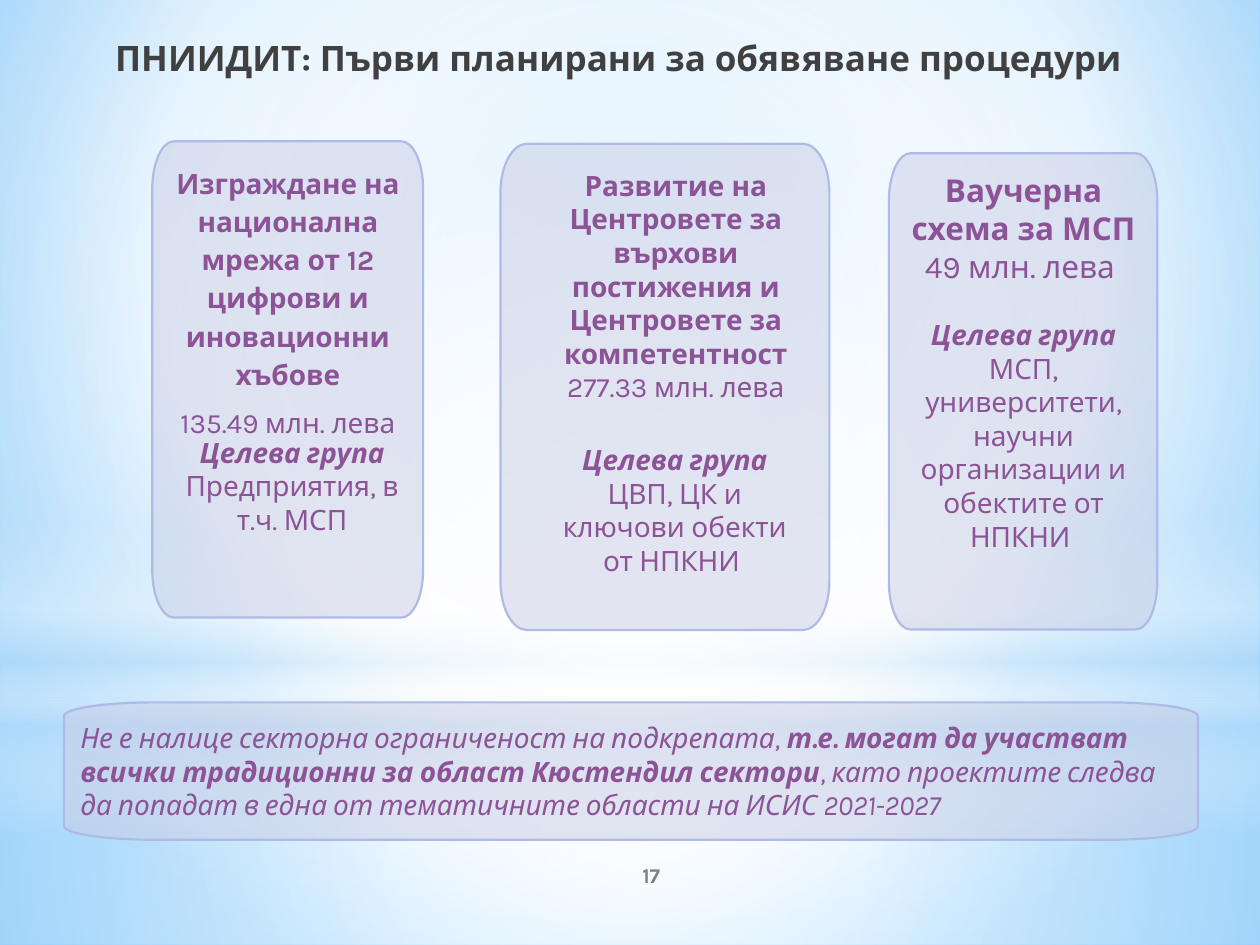
from lxml.etree import SubElement
from pptx import Presentation
from pptx.dml.color import RGBColor
from pptx.enum.shapes import MSO_SHAPE as Preset
from pptx.enum.text import MSO_ANCHOR as Anchor, MSO_AUTO_SIZE as AutoSize, PP_ALIGN as Align
from pptx.oxml import parse_xml
from pptx.oxml.ns import nsdecls, qn
from pptx.util import Cm, Pt

FONT = "Karla"
COLORS = {
    "title": "404040", "text": "8D5397", "number": "808080",
    "panel": "C8CDE5", "edge": "AFBBE6",
    "white": "FFFFFF", "mist": "B4DCFA", "sky": "9ED5FF", "deep": "5BB9FF",
}
CENTER = (50, 50, 50, 50)
ARC = 0.55
BACKDROP = [
    (Preset.RECTANGLE, (0, 14.17, 25.4, 4.88), CENTER,
     [(0, "white", 91), (37, "white", 76), (100, "mist", 79)]),
    (Preset.RECTANGLE, (0, 0, 25.4, 14.17), CENTER,
     [(0, "white", 89), (48, "white", 62), (100, "mist", 79)]),
    (Preset.RECTANGLE, (0, 10.47, 25.4, 6.35), None,
     [(0, "white", 0), (29, "white", 30), (45, "mist", 40),
      (55, "white", 26), (65, "mist", 60), (100, "white", 0)]),
    (Preset.OVAL, (0, 4.44, 25.4, 14.17), CENTER,
     [(0, "white", 100), (56, "white", 0)]),
]
CARDS = [
    {"panel": (3.07, 2.85, 5.46, 9.6), "size": 16, "line": 1.14, "after": 5.6,
     "head_box": (2.78, 3.13, 6.05, 5.18),
     "head": "Изграждане на национална мрежа от 12 цифрови и иновационни хъбове",
     "budget": "135.49 млн. лева",
     "target_box": (3.25, 8.65, 5.28, 2.31), "target": "Предприятия, в т.ч. МСП"},
    {"panel": (10.09, 2.9, 6.63, 9.8), "size": 16, "line": 1, "after": 0,
     "head_box": (10.87, 3.27, 5.51, 5.05),
     "head": "Развитие на Центровете за върхови постижения и Центровете за компетентност",
     "budget": "277.33 млн. лева",
     "target_box": (10.85, 8.8, 5.51, 3), "target": "ЦВП, ЦК и ключови обекти от НПКНИ "},
    {"panel": (17.92, 3.09, 5.41, 9.6), "size": 18, "line": 1, "after": 0,
     "head_box": (17.93, 3.33, 5.41, 2.57),
     "head": "Ваучерна схема за МСП", "budget": "49 млн. лева ",
     "target_box": (17.93, 6.28, 5.41, 5.05),
     "target": "МСП, университети, научни организации и обектите от НПКНИ "},
]


def rgb(name):
    return RGBColor.from_string(COLORS[name])


def lengths(values):
    return [Cm(value) for value in values]


def set_gradient(fill, holder, stops, focus):
    fill.background()
    stop_xml = "".join(
        f'<a:gs pos="{pos * 1000}"><a:srgbClr val="{COLORS[color]}">'
        f'<a:alpha val="{alpha * 1000}"/></a:srgbClr></a:gs>'
        for pos, color, alpha in stops)
    if focus:
        sides = " ".join(f'{side}="{value * 1000}"' for side, value in zip("ltrb", focus))
        direction = f'<a:path path="circle"><a:fillToRect {sides}/></a:path>'
    else:
        direction = '<a:lin ang="5400000" scaled="0"/>'
    gradient = parse_xml(f'<a:gradFill {nsdecls("a")} rotWithShape="1">'
                         f'<a:gsLst>{stop_xml}</a:gsLst>{direction}</a:gradFill>')
    holder.replace(holder.find(qn("a:noFill")), gradient)


def add_backdrop(page):
    fill = page.background.fill
    fill.background()
    set_gradient(fill, page._element.find(".//" + qn("p:bgPr")),
                 [(0, "sky", 100), (60, "white", 100), (100, "deep", 100)], (20, 10, 20, 60))
    for preset, box, focus, stops in BACKDROP:
        shape = page.shapes.add_shape(preset, *lengths(box))
        shape.shadow.inherit = False
        shape.line.fill.background()
        set_gradient(shape.fill, shape._element.spPr, stops, focus)


def round_corners(panel, points, corners):
    segments = panel._element.findall(".//" + qn("a:lnTo"))[::2]
    for segment, start, end, corner in zip(segments, points[::2], points[1::2], corners):
        curve = parse_xml(f'<a:cubicBezTo {nsdecls("a")}/>')
        handles = [[p + ARC * (c - p) for p, c in zip(point, corner)] for point in (start, end)]
        for x, y in (*handles, end):
            SubElement(curve, qn("a:pt"), x=str(round(x - panel.left)), y=str(round(y - panel.top)))
        segment.getparent().replace(segment, curve)


def add_panel(page, box):
    left, top, width, height = lengths(box)
    right, bottom = left + width, top + height
    dx, dy = round(width * 0.08), round(height * 0.1)
    corners = [(left, top), (right, top), (right, bottom), (left, bottom)]
    points = [(left, top + dy), (left + dx, top), (right - dx, top), (right, top + dy),
              (right, bottom - dy), (right - dx, bottom), (left + dx, bottom), (left, bottom - dy)]
    builder = page.shapes.build_freeform(*points[0])
    builder.add_line_segments(points[1:], close=True)
    panel = builder.convert_to_shape()
    round_corners(panel, points, corners)
    panel.shadow.inherit = False
    panel.fill.solid()
    panel.fill.fore_color.rgb = rgb("panel")
    color = panel._element.spPr.find(qn("a:solidFill")).find(qn("a:srgbClr"))
    SubElement(color, qn("a:alpha"), val="50000")
    panel.line.color.rgb = rgb("edge")
    panel.line.width = Pt(1.25)
    return panel


def add_span(para, text, size=16, color="text", bold=False, italic=False):
    span = para.add_run()
    span.text = text
    font = span.font
    font.name, font.size, font.bold, font.italic = FONT, Pt(size), bold, italic
    font.color.rgb = rgb(color)


def add_text_box(page, box, grow=True):
    frame = page.shapes.add_textbox(*lengths(box)).text_frame
    frame.word_wrap = True
    if grow:
        frame.auto_size = AutoSize.SHAPE_TO_FIT_TEXT
    frame.paragraphs[0].alignment = Align.CENTER
    return frame


def add_card(page, card):
    add_panel(page, card["panel"])
    frame = add_text_box(page, card["head_box"])
    for para, text, bold in ((frame.paragraphs[0], card["head"], True),
                             (frame.add_paragraph(), card["budget"], False)):
        para.alignment = Align.CENTER
        para.line_spacing = card["line"]
        para.space_after = Pt(card["after"])
        add_span(para, text, card["size"], bold=bold)
    para = add_text_box(page, card["target_box"]).paragraphs[0]
    add_span(para, "Целева група ", bold=True, italic=True)
    add_span(para, card["target"])


def add_banner(page):
    frame = add_panel(page, (1.29, 14.16, 22.86, 2.77)).text_frame
    frame.word_wrap = True
    frame.vertical_anchor = Anchor.MIDDLE
    frame.margin_left = frame.margin_right = Cm(0.33)
    frame.margin_top = frame.margin_bottom = Cm(0.33)
    para = frame.paragraphs[0]
    para.alignment = Align.LEFT
    add_span(para, "Не е налице секторна ограниченост на подкрепата, ", italic=True)
    add_span(para, "т.е. могат да участват всички традиционни за област Кюстендил сектори",
             bold=True, italic=True)
    add_span(para, ", като проектите следва да попадат в една от тематичните области "
                   "на ИСИС 2021-2027", italic=True)


def main():
    deck = Presentation()
    deck.slide_width, deck.slide_height = Cm(25.4), Cm(19.05)
    page = deck.slides.add_slide(deck.slide_layouts[6])
    add_backdrop(page)
    title = add_text_box(page, (0, 0.61, 24.94, 2.01), grow=False)
    add_span(title.paragraphs[0], "ПНИИДИТ: Първи планирани за обявяване процедури",
             20, "title", bold=True)
    for card in CARDS:
        add_card(page, card)
    add_banner(page)
    number = add_text_box(page, (10.59, 17.13, 5.08, 1.02), grow=False)
    number.vertical_anchor = Anchor.MIDDLE
    add_span(number.paragraphs[0], "17", 12, "number", bold=True)
    deck.save("out.pptx")


if __name__ == "__main__":
    main()
